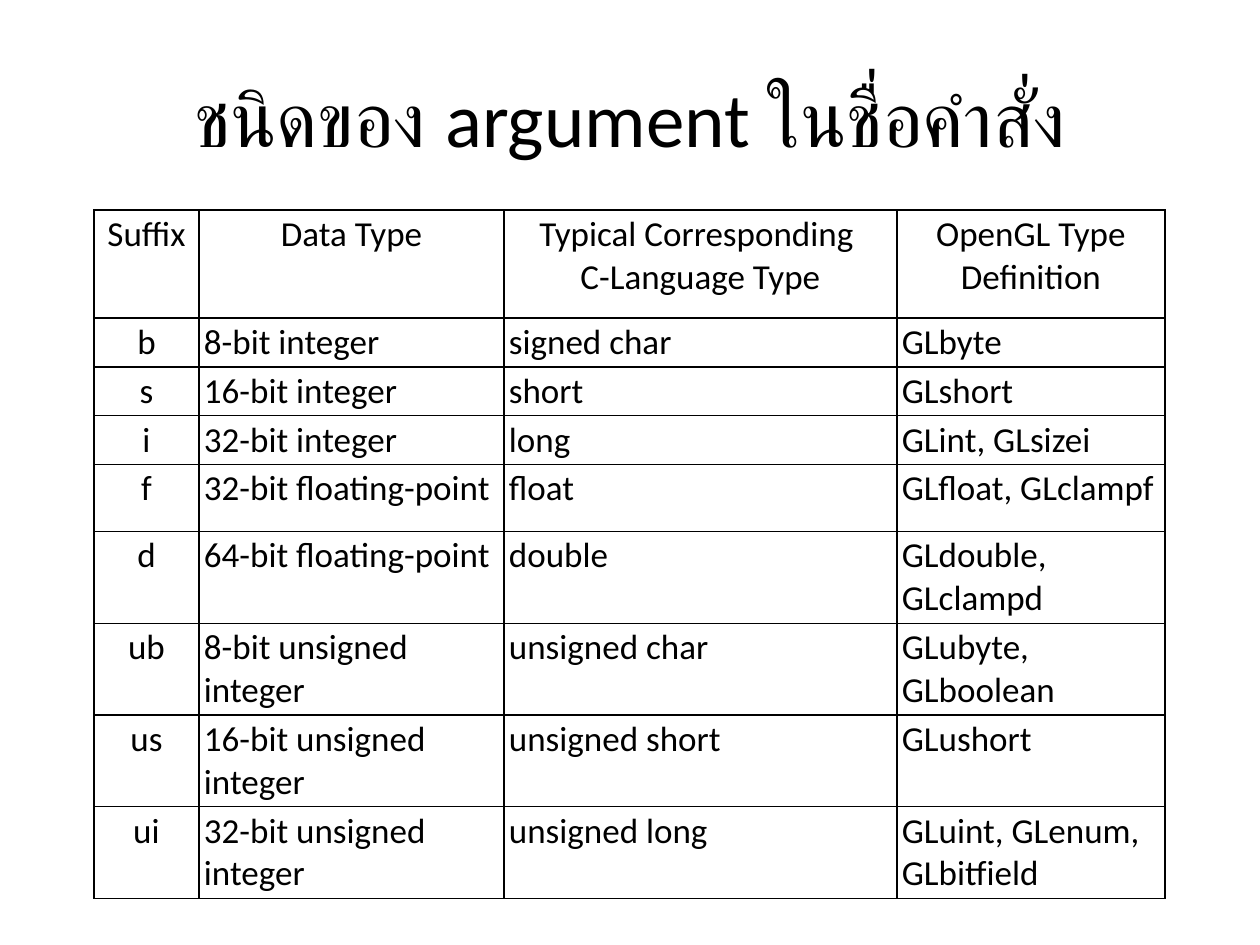
from dataclasses import dataclass

from lxml import etree
from pptx import Presentation
from pptx import util as u
from pptx.dml import color
from pptx.enum import text
from pptx.oxml import ns

PX = u.Inches(1) // 126


@dataclass
class Theme:
    font: str = "Calibri"
    ink: str = "000000"
    title_size: int = 44
    cell_size: int = 20
    border_width: int = 1


theme = Theme()


def style(para, size, align):
    para.alignment = align
    para.font.name = theme.font
    para.font.size = u.Pt(size)
    para.font.bold = False
    para.font.color.rgb = color.RGBColor.from_string(theme.ink)


def add_borders(cell):
    properties = cell._tc.get_or_add_tcPr()
    for index, side in enumerate(("lnL", "lnR", "lnT", "lnB")):
        line = etree.Element(ns.qn(f"a:{side}"), w=str(u.Pt(theme.border_width)))
        fill = etree.SubElement(line, ns.qn("a:solidFill"))
        etree.SubElement(fill, ns.qn("a:srgbClr"), val=theme.ink)
        properties.insert(index, line)


deck = Presentation()
deck.slide_width, deck.slide_height = 1260 * PX, 945 * PX
page = deck.slides.add_slide(deck.slide_layouts[5])

title = page.shapes.title
title.left, title.top, title.width, title.height = 63 * PX, 38 * PX, 1134 * PX, 158 * PX
title.text_frame.vertical_anchor = text.MSO_ANCHOR.MIDDLE
title.text_frame.text = "ชนิดของ argument ในชื่อคำสั่ง"
style(title.text_frame.paragraphs[0], theme.title_size, text.PP_ALIGN.CENTER)

rows = [
    ("Suffix", "Data Type", "Typical Corresponding \nC-Language Type", "OpenGL Type Definition"),
    ("b", "8-bit integer", "signed char", "GLbyte"),
    ("s", "16-bit integer", "short", "GLshort"),
    ("i", "32-bit integer", "long", "GLint, GLsizei"),
    ("f", "32-bit floating-point", "float", "GLfloat, GLclampf"),
    ("d", "64-bit floating-point", "double", "GLdouble, GLclampd"),
    ("ub", "8-bit unsigned integer", "unsigned char", "GLubyte, GLboolean"),
    ("us", "16-bit unsigned integer", "unsigned short", "GLushort"),
    ("ui", "32-bit unsigned integer", "unsigned long", "GLuint, GLenum, GLbitfield"),
]
column_widths = [105, 305, 393, 268]
row_heights = [108, 47, 47, 47, 67, 88, 67, 67, 88]

frame = page.shapes.add_table(
    len(rows), len(column_widths), 94 * PX, 210 * PX,
    sum(column_widths) * PX, sum(row_heights) * PX,
)
table = frame.table
table.first_row = False
table.horz_banding = False
for column, width in zip(table.columns, column_widths):
    column.width = width * PX
for row, height in zip(table.rows, row_heights):
    row.height = height * PX

for row_index, values in enumerate(rows):
    for column_index, value in enumerate(values):
        cell = table.cell(row_index, column_index)
        cell.margin_left = cell.margin_right = 5 * PX
        cell.margin_top = cell.margin_bottom = 3 * PX
        cell.fill.background()
        add_borders(cell)
        para = cell.text_frame.paragraphs[0]
        para.text = value
        centred = row_index == 0 or column_index == 0
        style(para, theme.cell_size, text.PP_ALIGN.CENTER if centred else text.PP_ALIGN.LEFT)

deck.save("out.pptx")
